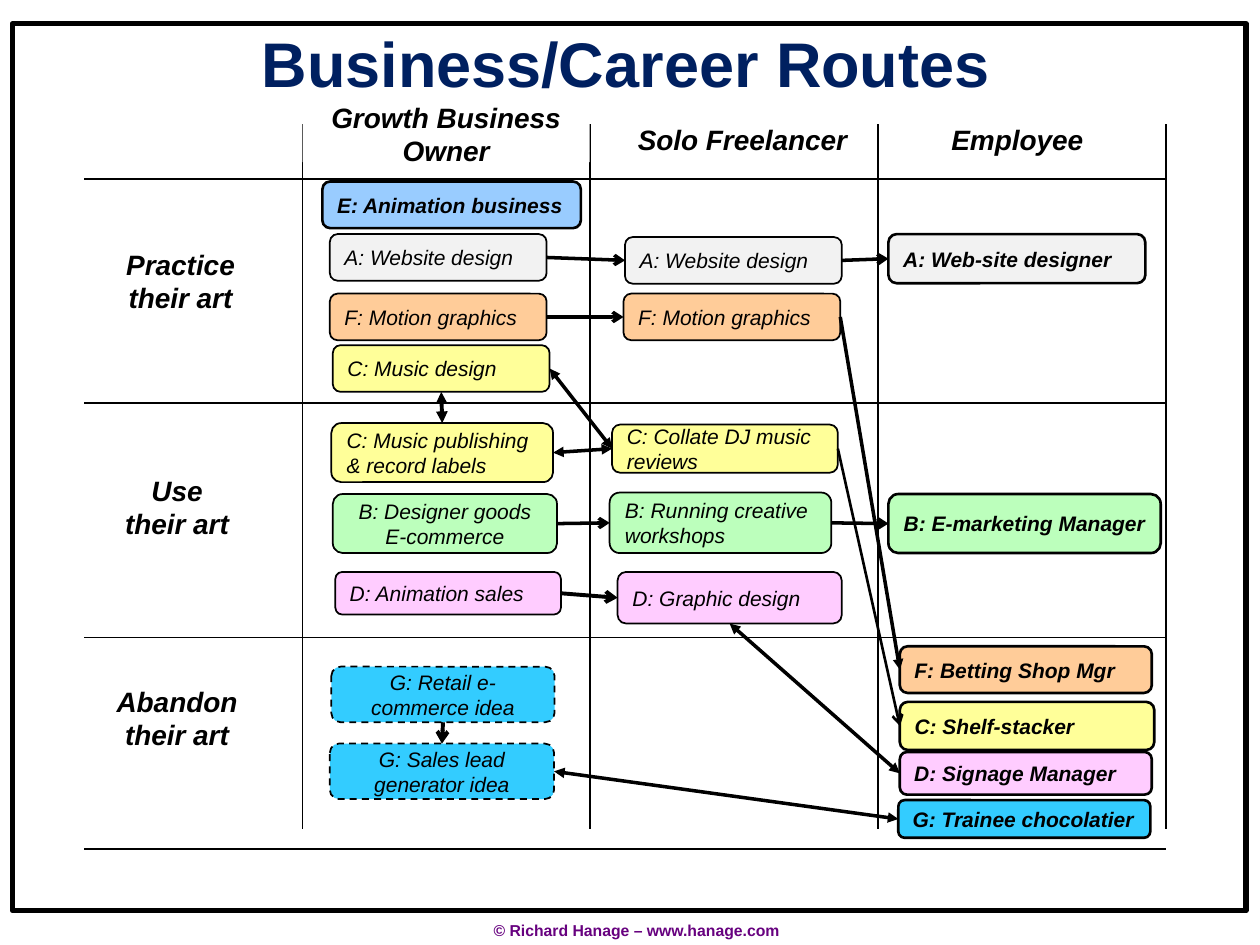
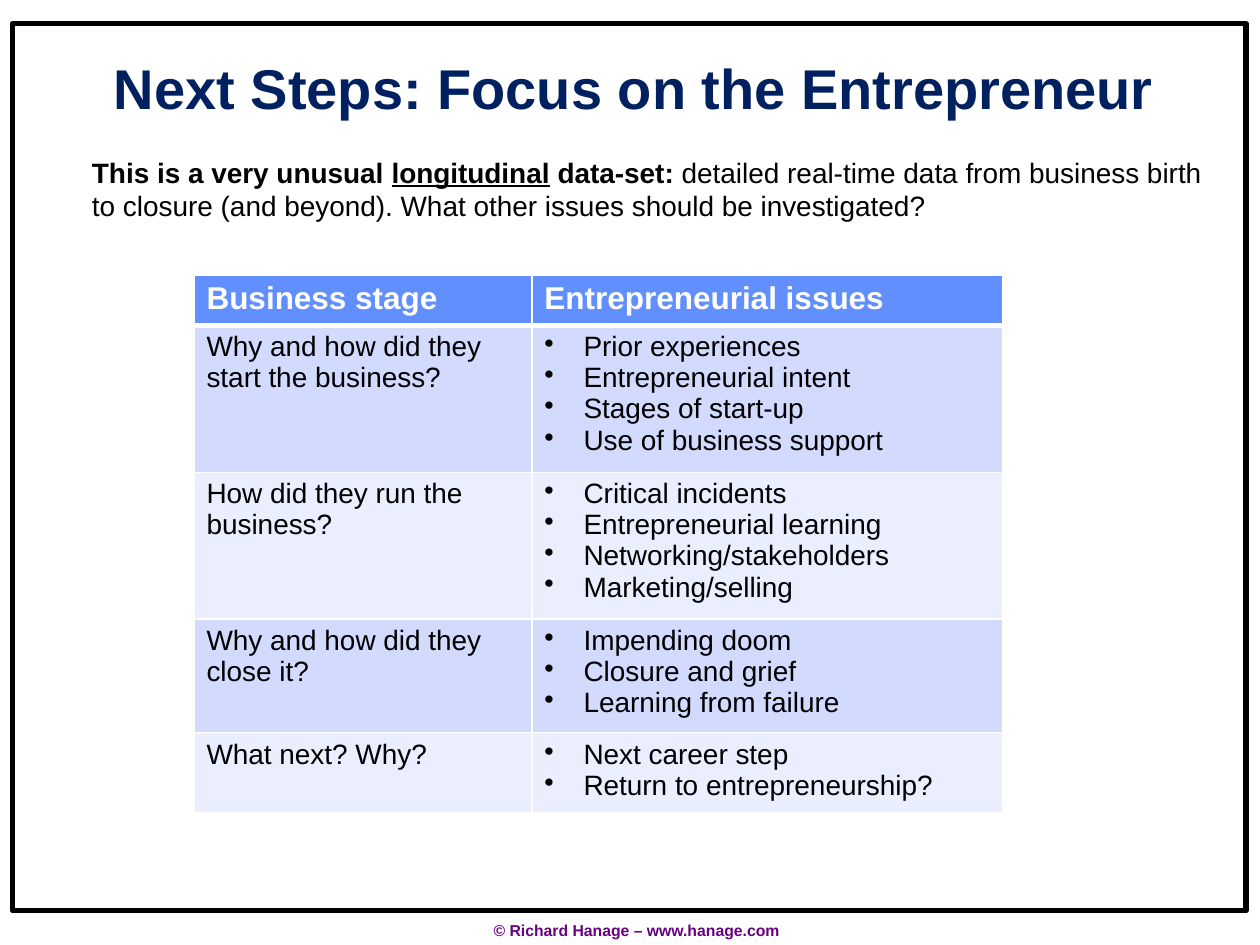
"""Build two slides on the career routes and next steps of entrepreneurs."""
from dataclasses import dataclass

from lxml import etree
from pptx import Presentation
from pptx.dml.color import RGBColor
from pptx.enum.dml import MSO_LINE
from pptx.enum.shapes import MSO_CONNECTOR, MSO_SHAPE
from pptx.enum.text import MSO_ANCHOR, MSO_AUTO_SIZE, PP_ALIGN
from pptx.oxml.ns import qn
from pptx.util import Cm, Pt


@dataclass(frozen=True)
class Theme:
    """Colours, font and type sizes shared by the slides."""
    font: str = "Arial"
    ink: str = "000000"
    paper: str = "FFFFFF"
    title: str = "002060"
    credit: str = "67017F"
    table_head: str = "618FFD"
    table_bands: tuple = ("D2DBFE", "EAEEFF")
    map_title_size: int = 36
    title_size: int = 32
    head_size: int = 18
    text_size: int = 16
    card_size: int = 12
    credit_size: int = 9


@dataclass(frozen=True)
class Box:
    """A rectangle in centimetres."""
    left: float
    top: float
    width: float
    height: float

    def inside(self, x, y, width, height):
        """Return a box placed relative to this one."""
        return Box(self.left + x, self.top + y, width, height)

    def lengths(self):
        """Return left, top, width and height as lengths."""
        return [Cm(v) for v in (self.left, self.top, self.width, self.height)]


THEME = Theme()
LEFT, CENTER = PP_ALIGN.LEFT, PP_ALIGN.CENTER

CREDIT = "© Richard Hanage – www.hanage.com"

PERSON_COLOURS = {"A": "F2F2F2", "B": "BCFFBC", "C": "FFFF99", "D": "FFCCFF",
                  "E": "99CCFF", "F": "FFCC99", "G": "33CCFF"}

CARD_STYLES = {
    "route": {"width": 1, "bold": False, "dash": None, "align": LEFT},
    "centred": {"width": 1, "bold": False, "dash": None, "align": CENTER},
    "idea": {"width": 1, "bold": False, "dash": MSO_LINE.DASH, "align": CENTER},
    "outcome": {"width": 1.5, "bold": True, "dash": None, "align": LEFT},
}

CARDS = {
    "animation": ("E: Animation business", "outcome", 4.8, 1.15, 5.21, 0.94),
    "website": ("A: Website design", "route", 4.95, 2.21, 4.37, 0.94),
    "motion": ("F: Motion graphics", "route", 4.95, 3.41, 4.37, 0.94),
    "music": ("C: Music design", "route", 5.01, 4.45, 4.37, 0.94),
    "publishing": ("C: Music publishing & record labels", "route", 4.98, 6.02, 4.47, 1.19),
    "goods": ("B: Designer goods E-commerce", "centred", 5.01, 7.45, 4.52, 1.19),
    "sales": ("D: Animation sales", "route", 5.06, 9.02, 4.55, 0.86),
    "retail": ("G: Retail e-commerce idea", "idea", 4.98, 10.93, 4.5, 1.12),
    "leads": ("G: Sales lead generator idea", "idea", 4.95, 12.48, 4.52, 1.12),
    "solo website": ("A: Website design", "route", 10.9, 2.27, 4.37, 0.94),
    "solo motion": ("F: Motion graphics", "route", 10.87, 3.41, 4.37, 0.94),
    "reviews": ("C: Collate DJ music reviews", "route", 10.64, 6.05, 4.55, 0.97),
    "workshops": ("B: Running creative workshops", "route", 10.59, 7.42, 4.47, 1.22),
    "graphic": ("D: Graphic design", "route", 10.75, 9.02, 4.52, 1.04),
    "web designer": ("A: Web-site designer", "outcome", 16.21, 2.21, 5.18, 0.99),
    "marketer": ("B: E-marketing Manager", "outcome", 16.21, 7.45, 5.49, 1.19),
    "betting": ("F: Betting Shop Mgr", "outcome", 16.44, 10.52, 5.08, 0.94),
    "shelves": ("C: Shelf-stacker", "outcome", 16.44, 11.64, 5.13, 0.97),
    "signage": ("D: Signage Manager", "outcome", 16.44, 12.65, 5.08, 0.86),
    "chocolate": ("G: Trainee chocolatier", "outcome", 16.41, 13.62, 5.08, 0.76),
}

TOP_SITE, LEFT_SITE, BOTTOM_SITE, RIGHT_SITE = range(4)
ACROSS, DOWN, DROP = (RIGHT_SITE, LEFT_SITE), (BOTTOM_SITE, TOP_SITE), (BOTTOM_SITE, LEFT_SITE)
ONE_WAY, SOLID_TIP = {"tailEnd": "arrow"}, {"tailEnd": "triangle"}
BOTH_WAYS = {"headEnd": "triangle", "tailEnd": "triangle"}

ROUTES = [
    ("website", "solo website", ACROSS, 2, ONE_WAY),
    ("solo website", "web designer", ACROSS, 2, ONE_WAY),
    ("motion", "solo motion", ACROSS, 2, ONE_WAY),
    ("solo motion", "betting", ACROSS, 2, SOLID_TIP),
    ("music", "reviews", ACROSS, 2, BOTH_WAYS),
    ("music", "publishing", DOWN, 2.25, BOTH_WAYS),
    ("publishing", "reviews", ACROSS, 2, BOTH_WAYS),
    ("reviews", "shelves", ACROSS, 1.5, ONE_WAY),
    ("goods", "workshops", ACROSS, 2, ONE_WAY),
    ("workshops", "marketer", ACROSS, 2, ONE_WAY),
    ("sales", "graphic", ACROSS, 2.25, ONE_WAY),
    ("graphic", "signage", DROP, 2, BOTH_WAYS),
    ("retail", "leads", DOWN, 2.25, ONE_WAY),
    ("leads", "chocolate", ACROSS, 2, BOTH_WAYS),
]

GRID_LABELS = [
    ("Growth Business Owner", 4.4, -0.38, 5.79, 1.14),
    ("Solo Freelancer", 10.87, -0.17, 4.8, 0.94),
    ("Employee", 16.41, -0.17, 4.8, 0.94),
    ("Practice\ntheir art", -0.46, 2.24, 4.8, 1.83),
    ("Use\ntheir art", -0.53, 6.79, 4.8, 1.83),
    ("Abandon\ntheir art", -0.53, 11.05, 4.8, 1.83),
]

INTRO = [
    ("This is a very unusual ", {"bold": True}),
    ("longitudinal", {"bold": True, "underline": True}),
    (" data-set: ", {"bold": True}),
    ("detailed real-time data from business birth to closure (and beyond). "
     "What other issues should be investigated?", {"bold": False}),
]

STAGE_HEADS = ("Business stage", "Entrepreneurial issues")
STAGES = [
    ("Why and how did they start the business?",
     ["Prior experiences", "Entrepreneurial intent", "Stages of start-up",
      "Use of business support"]),
    ("How did they run the business?",
     ["Critical incidents", "Entrepreneurial learning", "Networking/stakeholders",
      "Marketing/selling"]),
    ("Why and how did they close it?",
     ["Impending doom", "Closure and grief", "Learning from failure"]),
    ("What next? Why?", ["Next career step", "Return to entrepreneurship?"]),
]


def apply(target, **values):
    """Set every given attribute on the target."""
    for name, value in values.items():
        setattr(target, name, value)


def add_run(paragraph, text, size, colour=THEME.ink, **values):
    """Append a formatted run to a paragraph."""
    run = paragraph.add_run()
    run.text = text
    apply(run.font, name=THEME.font, size=Pt(size), **values)
    run.font.color.rgb = RGBColor.from_string(colour)


def write_lines(frame, lines, size, align=LEFT, **values):
    """Write each line as a paragraph and return the paragraphs."""
    for number, line in enumerate(lines):
        paragraph = frame.add_paragraph() if number else frame.paragraphs[0]
        paragraph.alignment = align
        add_run(paragraph, line, size, **values)
    return frame.paragraphs


def set_bullet(paragraph, margin, indent=0, char=None):
    """Set the indent of a paragraph and its bullet, or none."""
    properties = paragraph._p.get_or_add_pPr()
    properties.set("marL", str(Cm(margin)))
    properties.set("indent", str(Cm(indent)))
    if char:
        etree.SubElement(properties, qn("a:buChar"), char=char)
    else:
        etree.SubElement(properties, qn("a:buNone"))


def paint(shape, fill=None, line=None, width=1, dash=None):
    """Give a shape its fill and outline, without a shadow."""
    shape.shadow.inherit = False
    for part, colour in ((shape.fill, fill), (shape.line.fill, line)):
        if colour:
            part.solid()
            part.fore_color.rgb = RGBColor.from_string(colour)
        else:
            part.background()
    if line:
        apply(shape.line, width=Pt(width), dash_style=dash)


def add_line(slide, start, end, width=1, tips=None):
    """Draw a straight line between two points, with optional arrowheads."""
    line = slide.shapes.add_connector(
        MSO_CONNECTOR.STRAIGHT, *[Cm(value) for value in (*start, *end)])
    line.line.width = Pt(width)
    line.line.color.rgb = RGBColor.from_string(THEME.ink)
    for tag, kind in (tips or {}).items():
        etree.SubElement(line.line._get_or_add_ln(), qn(f"a:{tag}"), type=kind)
    etree.SubElement(line._element.spPr, qn("a:effectLst"))
    return line


def place(shape, box):
    """Move a placeholder into a box and fix its text size."""
    apply(shape, **dict(zip(("left", "top", "width", "height"), box.lengths())))
    shape.text_frame.auto_size = MSO_AUTO_SIZE.NONE


def add_page(deck, layout, box, title, size):
    """Add a slide with the shared border, credit line and title."""
    slide = deck.slides.add_slide(deck.slide_layouts[layout])
    border = slide.shapes.add_shape(MSO_SHAPE.RECTANGLE, *Box(0.25, 0.48, 24.87, 17.88).lengths())
    paint(border, line=THEME.ink, width=3)
    credit = slide.shapes.add_textbox(*Box(9.7, 18.44, 6.4, 0.64).lengths())
    write_lines(credit.text_frame, [CREDIT], THEME.credit_size, colour=THEME.credit, bold=True)
    heading = slide.shapes.title
    place(heading, box)
    heading.text_frame.vertical_anchor = MSO_ANCHOR.MIDDLE
    lines = write_lines(heading.text_frame, [title], size, CENTER, colour=THEME.title, bold=True)
    lines[0].line_spacing = 0.9
    return slide


def add_grid(slide, box):
    """Rule the grid of career types and uses of art, and label it."""
    for column in range(4):
        x = box.left + 4.4 + 5.8 * column
        add_line(slide, (x, box.top), (x, box.top + 14.2))
    for offset in (1.1, 5.62, 10.34, box.height):
        y = box.top + offset
        add_line(slide, (box.left, y), (box.left + box.width, y))
    for text, *bounds in GRID_LABELS:
        label = slide.shapes.add_shape(MSO_SHAPE.RECTANGLE, *box.inside(*bounds).lengths())
        paint(label, fill=THEME.paper)
        write_lines(label.text_frame, text.split("\n"), THEME.text_size, CENTER,
                    bold=True, italic=True)


def add_routes(slide, box):
    """Place the career cards and join them with arrows."""
    cards = {}
    for key, (text, style, *bounds) in CARDS.items():
        look = CARD_STYLES[style]
        card = slide.shapes.add_shape(
            MSO_SHAPE.ROUNDED_RECTANGLE, *box.inside(*bounds).lengths())
        paint(card, PERSON_COLOURS[text[0]], THEME.ink, look["width"], look["dash"])
        write_lines(card.text_frame, [text], THEME.card_size, look["align"],
                    bold=look["bold"], italic=True)
        cards[key] = card
    for source, target, (leave, arrive), width, tips in ROUTES:
        route = add_line(slide, (0, 0), (0, 0), width, tips)
        route.begin_connect(cards[source], leave)
        route.end_connect(cards[target], arrive)


def add_intro(slide, box):
    """Write the opening statement in the body placeholder."""
    body = slide.placeholders[1]
    place(body, box)
    statement = body.text_frame.paragraphs[0]
    set_bullet(statement, 0.51)
    statement.space_before = Pt(0)
    for text, values in INTRO:
        add_run(statement, text, THEME.text_size, **values)


def style_cell(cell, fill, bottom=1):
    """Fill a cell and give it white borders."""
    properties = cell._tc.get_or_add_tcPr()
    for tag, width in (("lnL", 1), ("lnR", 1), ("lnT", 1), ("lnB", bottom)):
        border = etree.SubElement(properties, qn(f"a:{tag}"), w=str(Pt(width)))
        solid = etree.SubElement(border, qn("a:solidFill"))
        etree.SubElement(solid, qn("a:srgbClr"), val=THEME.paper)
    cell.fill.solid()
    cell.fill.fore_color.rgb = RGBColor.from_string(fill)


def add_stages(slide, box):
    """Add the table of business stages and entrepreneurial issues."""
    table = slide.shapes.add_table(len(STAGES) + 1, 2, *box.lengths()).table
    for column, width in zip(table.columns, (6.81, box.width - 6.81)):
        column.width = Cm(width)
    for row, height in zip(table.rows, (1, 2.75, 2.75, 2.1, 1.5)):
        row.height = Cm(height)
    for column, head in enumerate(STAGE_HEADS):
        cell = table.cell(0, column)
        style_cell(cell, THEME.table_head, bottom=3)
        write_lines(cell.text_frame, [head], THEME.head_size, colour=THEME.paper, bold=True)
    for row, (stage, issues) in enumerate(STAGES, 1):
        for column, lines in enumerate(([stage], issues)):
            cell = table.cell(row, column)
            style_cell(cell, THEME.table_bands[(row - 1) % 2])
            for line in write_lines(cell.text_frame, lines, THEME.text_size, bold=False):
                if column:
                    set_bullet(line, 0.79, -0.79, "•")


def main():
    """Build and save the deck."""
    deck = Presentation()
    apply(deck, slide_width=Cm(25.4), slide_height=Cm(19.05))
    routes = add_page(deck, 5, Box(2.67, 0.53, 19.89, 1.63),
                      "Business/Career Routes", THEME.map_title_size)
    route_map = Box(1.7, 2.51, 21.8, 14.61)
    add_grid(routes, route_map)
    add_routes(routes, route_map)
    steps = add_page(deck, 1, Box(1.09, 0.74, 23.39, 2.21),
                     "Next Steps: Focus on the Entrepreneur", THEME.title_size)
    add_intro(steps, Box(1.09, 3, 23.8, 12.19))
    add_stages(steps, Box(3.91, 5.54, 16.31, 10.1))
    deck.save("out.pptx")


if __name__ == "__main__":
    main()
